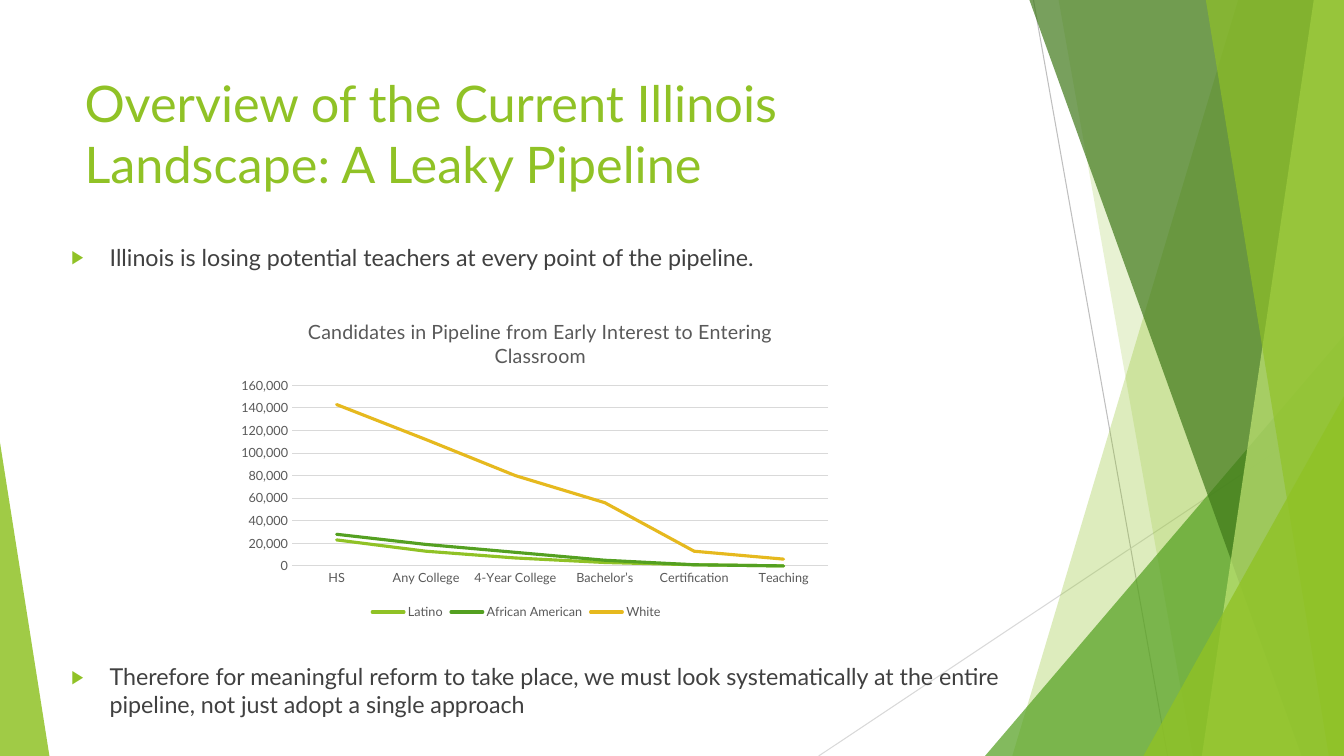
import pptx
import pptx.util
import pptx.dml.color
import pptx.chart.data
import pptx.enum.chart
import pptx.enum.shapes
import pptx.oxml
import pptx.oxml.ns
from pptx.util import Inches

qn = pptx.oxml.ns.qn
NS = pptx.oxml.ns.nsdecls


def tint(code):
    """Turn a hex string into a colour."""
    return pptx.dml.color.RGBColor.from_string(code)


def put(item, **vals):
    """Set each given format value on an item."""
    for name, val in vals.items():
        setattr(item, name, val)


class Deck:
    """Hold the style and the current slide."""

    face = "Lato"
    lime, leaf, gold = "90C226", "54A021", "E6B91E"
    ink, gray, rule = "404040", "595959", "D9D9D9"

    def __init__(self):
        """Open a wide deck with one blank slide."""
        self.prs = pptx.Presentation()
        put(self.prs, slide_width=Inches(13.33), slide_height=Inches(7.5))
        self.slide = self.prs.slides.add_slide(self.prs.slide_layouts[6])
        self.shapes = self.slide.shapes

    def font(self, font, size, code):
        """Style a font."""
        put(font, name=self.face, size=pptx.util.Pt(size), bold=False)
        font.color.rgb = tint(code)

    def stroke(self, line, code, width=0.75):
        """Style a line."""
        line.color.rgb = tint(code)
        line.width = pptx.util.Pt(width)

    def line(self, ends, code):
        """Draw a thin straight line."""
        kind = pptx.enum.shapes.MSO_CONNECTOR.STRAIGHT
        link = self.shapes.add_connector(kind, *map(Inches, ends))
        self.stroke(link.line, code)
        link.element.spPr.append(pptx.oxml.parse_xml(f"<a:effectLst {NS('a')}/>"))

    def glaze(self, shape, code, alpha):
        """Give a shape a see-through fill with no outline."""
        shape.shadow.inherit = False
        shape.fill.solid()
        shape.fill.fore_color.rgb = tint(code)
        shape.line.fill.background()
        node = shape.element.spPr.find(".//" + qn("a:srgbClr"))
        node.append(pptx.oxml.parse_xml(f'<a:alpha {NS("a")} val="{alpha * 1000}"/>'))

    def band(self, top, foot, code, alpha):
        """Draw a full-height band that runs to the right edge."""
        spots = [(13.33, 0), (13.33, 7.5), (foot, 7.5)]
        form = self.shapes.build_freeform(Inches(top), 0)
        form.add_line_segments([(Inches(x), Inches(y)) for x, y in spots])
        self.glaze(form.convert_to_shape(), code, alpha)

    def wedge(self, left, top, right, peak, code, alpha):
        """Draw a triangle that stands on the bottom edge."""
        kind = pptx.enum.shapes.MSO_SHAPE.ISOSCELES_TRIANGLE
        box = map(Inches, (left, top, right - left, 7.5 - top))
        shape = self.shapes.add_shape(kind, *box)
        shape.adjustments[0] = peak
        self.glaze(shape, code, alpha)

    def text(self, box, words, size, code):
        """Add a wrapped text box and return its paragraph."""
        frame = self.shapes.add_textbox(*map(Inches, box)).text_frame
        frame.word_wrap = True
        para = frame.paragraphs[0]
        run = para.add_run()
        run.text = words
        self.font(run.font, size, code)
        return para

    def point(self, top, high, words):
        """Add a bulleted point."""
        para = self.text((0.61, top, 9.53, high), words, 16.6, self.ink)
        props = para._p.get_or_add_pPr()
        for name, val in {"marL": 0.38, "indent": -0.38}.items():
            props.set(name, str(Inches(val)))
        for bit in (f'<a:buClr {NS("a")}><a:srgbClr val="{self.lime}"/></a:buClr>',
                    f'<a:buSzPct {NS("a")} val="80000"/>',
                    f'<a:buFont {NS("a")} typeface="{self.face}"/>',
                    f'<a:buChar {NS("a")} char="▶"/>'):
            props.append(pptx.oxml.parse_xml(bit))

    def place(self, node, spot, inner=False):
        """Fix the place of a chart part."""
        old = node.find(qn("c:layout"))
        if old is not None:
            node.remove(old)
        bits = '<c:layoutTarget val="inner"/>' if inner else ""
        bits += '<c:xMode val="edge"/><c:yMode val="edge"/>'
        bits += "".join(f'<c:{k} val="{v}"/>' for k, v in zip("xywh", spot))
        new = pptx.oxml.parse_xml(
            f"<c:layout {NS('c')}><c:manualLayout>{bits}</c:manualLayout></c:layout>")
        text = node.find(qn("c:tx"))
        node.insert(0 if text is None else node.index(text) + 1, new)

    def chart(self, box, title, cats, rows):
        """Add the line chart."""
        enum = pptx.enum.chart
        data = pptx.chart.data.CategoryChartData(number_format="#,##0")
        data.categories = cats
        for name, vals, code in rows:
            data.add_series(name, vals)
        chart = self.shapes.add_chart(
            enum.XL_CHART_TYPE.LINE, *map(Inches, box), data).chart
        self.font(chart.font, 10, "000000")
        put(chart, has_title=True, has_legend=True)
        head = chart.chart_title
        head.text_frame.text = title
        self.font(head.text_frame.paragraphs[0].runs[0].font, 14, self.gray)
        self.place(head.element, (0.16, 0.09))
        self.place(chart.element.find(".//" + qn("c:plotArea")),
                   (0.14, 0.3, 0.86, 0.53), True)
        put(chart.legend, position=enum.XL_LEGEND_POSITION.BOTTOM,
            include_in_layout=False)
        self.font(chart.legend.font, 9, self.gray)
        none = enum.XL_TICK_MARK.NONE
        across, up = chart.category_axis, chart.value_axis
        for axis in (across, up):
            put(axis, major_tick_mark=none, minor_tick_mark=none)
            self.font(axis.tick_labels.font, 9, self.gray)
        put(up, minimum_scale=0, maximum_scale=160000, major_unit=20000)
        put(up.tick_labels, number_format="#,##0", number_format_is_linked=False)
        up.format.line.fill.background()
        for item in (across, up.major_gridlines):
            self.stroke(item.format.line, self.rule)
        plot = chart.plots[0]
        plot.vary_by_categories = False
        for line, (name, vals, code) in zip(plot.series, rows):
            line.smooth = False
            line.marker.style = enum.XL_MARKER_STYLE.NONE
            self.stroke(line.format.line, code, 2.25)
            line.format.line._ln.set("cap", "rnd")


def main():
    """Build the slide and save it."""
    deck = Deck()
    deck.line((10.25, 0, 11.58, 7.5), "BFBFBF")
    deck.line((13.33, 4.03, 8.12, 7.5), deck.rule)
    deck.band(12.28, 10.04, deck.lime, 30)
    deck.band(10.5, 11.83, deck.lime, 20)
    deck.wedge(9.77, 3.33, 13.33, 1, deck.leaf, 72)
    deck.band(10.21, 12.91, "3F7819", 70)
    deck.band(13.03, 11.92, "C0E474", 70)
    deck.band(11.96, 13.18, deck.lime, 65)
    deck.wedge(11.34, 3.93, 13.33, 1, deck.lime, 80)
    deck.wedge(0, 4.39, 0.49, 0, deck.lime, 85)
    deck.text((0.74, 0.67, 9.4, 1.44),
              "Overview of the Current Illinois Landscape: A Leaky Pipeline",
              36, deck.lime)
    deck.point(2.36, 0.4,
               "Illinois is losing potential teachers at every point of the pipeline.")
    deck.point(6.52, 0.65,
               "Therefore for meaningful reform to take place, we must look "
               "systematically at the entire pipeline, not just adopt a single approach")
    deck.chart(
        (2.03, 2.81, 6.19, 3.38),
        "Candidates in Pipeline from Early Interest to Entering Classroom",
        ["HS", "Any College", "4-Year College", "Bachelor’s", "Certification",
         "Teaching"],
        [("Latino", (23000, 13000, 7000, 3000, 1000, 0), deck.lime),
         ("African American", (28000, 19000, 12000, 5000, 1000, 0), deck.leaf),
         ("White", (143000, 112000, 80000, 56000, 13000, 6000), deck.gold)])
    deck.prs.save("out.pptx")


if __name__ == "__main__":
    main()
